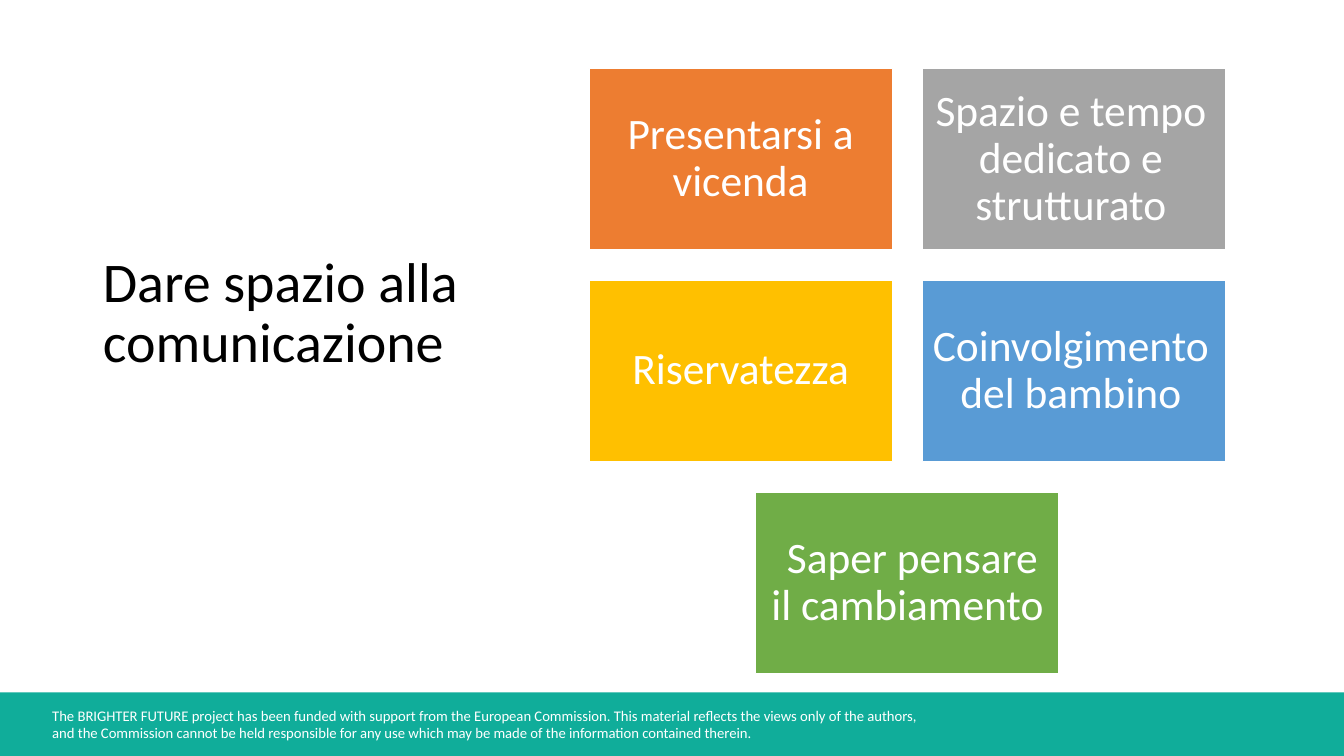
from pptx import Presentation
from pptx.dml.color import RGBColor
from pptx.enum.shapes import MSO_SHAPE
from pptx.enum.text import MSO_ANCHOR, MSO_AUTO_SIZE, PP_ALIGN
from pptx.util import Inches, Pt

WHITE = RGBColor(0xFF, 0xFF, 0xFF)
BLACK = RGBColor(0x00, 0x00, 0x00)
TEAL = RGBColor(0x10, 0xAD, 0x9A)
ORANGE = RGBColor(0xED, 0x7D, 0x31)
GREY = RGBColor(0xA5, 0xA5, 0xA5)
GOLD = RGBColor(0xFF, 0xC0, 0x00)
BLUE = RGBColor(0x59, 0x9B, 0xD5)
GREEN = RGBColor(0x70, 0xAD, 0x47)

CARDS = [
    (0, 0, ORANGE, "Presentarsi a vicenda", 0.13),
    (1, 0, GREY, "Spazio e tempo dedicato e strutturato", 0.06),
    (0, 1, GOLD, "Riservatezza", 0.13),
    (1, 1, BLUE, "Coinvolgimento del bambino", 0.06),
    (0.5, 2, GREEN, " Saper pensare il cambiamento ", 0.13),
]
NOTE = (
    "The BRIGHTER FUTURE project has been funded with support from the European "
    "Commission. This material reflects the views only of the authors, \v"
    "and the Commission cannot be held responsible for any use which may be made "
    "of the information contained therein."
)


class Deck:
    """Holds the style and the current slide, and adds each kind of element."""

    font = "Calibri"
    left, top = 5.84, 0.68
    wide, high = 3.01, 1.8
    step, drop = 3.31, 2.1

    def __init__(self):
        self.file = Presentation()
        self.file.slide_width = Inches(13.33)
        self.file.slide_height = Inches(7.5)
        self.slide = self.file.slides.add_slide(self.file.slide_layouts[5])

    def label(self, shape, text, size, color, align=PP_ALIGN.LEFT,
              anchor=MSO_ANCHOR.MIDDLE, space=0.9):
        frame = shape.text_frame
        frame.text = text
        frame.word_wrap = True
        frame.auto_size = MSO_AUTO_SIZE.NONE
        frame.vertical_anchor = anchor
        line = frame.paragraphs[0]
        line.alignment = align
        line.line_spacing = space
        line.font.name = self.font
        line.font.size = Pt(size)
        line.font.color.rgb = color
        return frame

    def block(self, x, y, w, h, fill):
        shape = self.slide.shapes.add_shape(
            MSO_SHAPE.RECTANGLE, Inches(x), Inches(y), Inches(w), Inches(h))
        shape.shadow.inherit = False
        shape.fill.solid()
        shape.fill.fore_color.rgb = fill
        shape.line.fill.background()
        return shape

    def title(self, text):
        shape = self.slide.shapes.title
        shape.left, shape.top = Inches(0.92), Inches(0.61)
        shape.width, shape.height = Inches(3.93), Inches(5.02)
        self.label(shape, text, 40, BLACK)

    def card(self, col, row, fill, text, inset):
        shape = self.block(self.left + col * self.step, self.top + row * self.drop,
                           self.wide, self.high, fill)
        shape.line.color.rgb = WHITE
        shape.line.width = Pt(1)
        frame = self.label(shape, text, 31, WHITE, PP_ALIGN.CENTER)
        frame.margin_left = Inches(inset)
        frame.margin_right = frame.margin_top = frame.margin_bottom = Inches(0.13)

    def footer(self, text):
        self.block(0, 6.87, 13.33, 0.63, TEAL)
        box = self.slide.shapes.add_textbox(
            Inches(0.42), Inches(6.96), Inches(10), Inches(0.45))
        self.label(box, text, 10.5, WHITE, anchor=MSO_ANCHOR.TOP, space=1.0)


def main():
    deck = Deck()
    deck.footer(NOTE)
    deck.title("Dare spazio alla comunicazione")
    for card in CARDS:
        deck.card(*card)
    deck.file.save("out.pptx")


if __name__ == "__main__":
    main()
